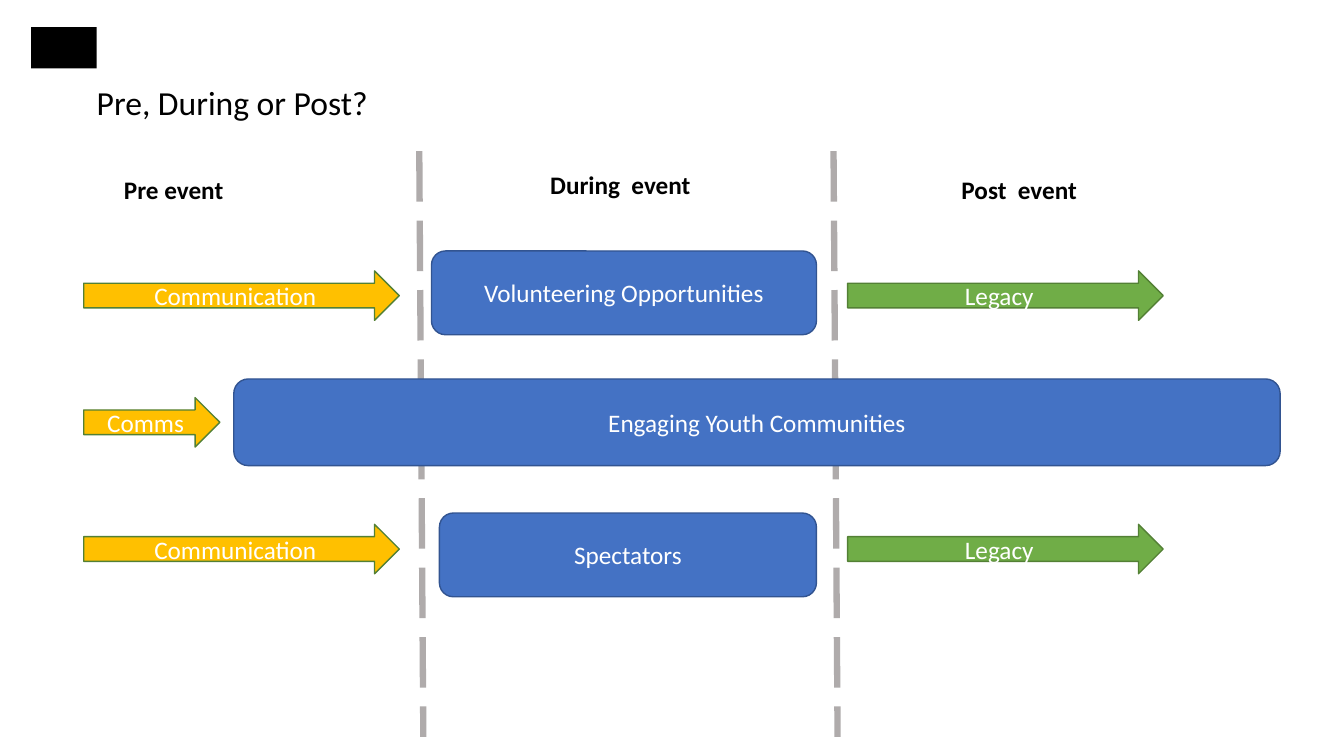
from lxml import etree
from pptx import Presentation
from pptx.dml.color import RGBColor
from pptx.enum.dml import MSO_LINE
from pptx.enum.shapes import MSO_CONNECTOR, MSO_SHAPE
from pptx.enum.text import MSO_ANCHOR, PP_ALIGN
from pptx.oxml.ns import qn
from pptx.util import Pt

BOX, ARROW, RECT = MSO_SHAPE.ROUNDED_RECTANGLE, MSO_SHAPE.RIGHT_ARROW, MSO_SHAPE.RECTANGLE
STRAIGHT, DASH = MSO_CONNECTOR.STRAIGHT, MSO_LINE.LONG_DASH
TOP, MIDDLE = MSO_ANCHOR.TOP, MSO_ANCHOR.MIDDLE
CENTER = PP_ALIGN.CENTER

FONT = "Calibri"
COLORS = {
    "black": "000000", "white": "FFFFFF", "grey": "AFABAB",
    "blue": "4472C4", "navy": "325491",
    "gold": "FFC000", "green": "70AD47", "forest": "538035",
}

TITLE = "Pre, During or Post?"
# text, left, top, width
HEADS = [
    ("Pre event", 81.4, 121, 90),
    ("During  event", 385.9, 117.4, 119.5),
    ("Post  event", 679.7, 121, 101.5),
]
# text, left, top, width, height
STAGES = [
    ("Volunteering Opportunities", 308.2, 179.3, 275, 59.8),
    ("Engaging Youth Communities", 167, 270.7, 747.4, 61.9),
    ("Spectators", 313.9, 366.5, 269.3, 59.8),
]
ROWS = [193.5, 284, 374.5]
PRE, POST = 59.8, 605.5
LONG, SHORT, TALL = 225.4, 97.2, 35.3
# text, row, left, width, fill
ARROWS = [
    ("Legacy", 0, POST, LONG, "green"),
    ("Legacy", 2, POST, LONG, "green"),
    ("Communication", 0, PRE, LONG, "gold"),
    ("Communication", 2, PRE, LONG, "gold"),
    ("Comms", 1, PRE, SHORT, "gold"),
]
BOUNDS = [595.4, 299.5]
LEAN, START, END = 2.9, 108, 526.3

deck = Presentation()
deck.slide_width, deck.slide_height = Pt(960), Pt(540)
slide = deck.slides.add_slide(deck.slide_layouts[6])
shapes = slide.shapes


def color(name):
    return RGBColor.from_string(COLORS[name])


def write(frame, text, size, ink, bold=False):
    para = frame.paragraphs[0]
    run = para.add_run()
    run.text = text
    font = run.font
    font.name, font.size, font.bold = FONT, Pt(size), bold
    font.color.rgb = color(ink)
    return para


def label(text, place, size, bold=False, wrap=False):
    frame = shapes.add_textbox(*map(Pt, place)).text_frame
    frame.word_wrap = wrap
    return frame, write(frame, text, size, "black", bold)


def block(kind, place, fill, edge=None, text=""):
    shape = shapes.add_shape(kind, *map(Pt, place))
    shape.shadow.inherit = False
    shape.fill.solid()
    shape.fill.fore_color.rgb = color(fill)
    if edge:
        shape.line.color.rgb = color(edge)
        shape.line.width = Pt(1)
    else:
        shape.line.fill.background()
    if text:
        frame = shape.text_frame
        frame.word_wrap = True
        frame.vertical_anchor = MIDDLE
        write(frame, text, 18, "white").alignment = CENTER


def divide(left):
    """Draw a slightly leaning dashed border between two phases."""
    line = shapes.add_connector(STRAIGHT, Pt(left), Pt(START), Pt(left + LEAN), Pt(END))
    line.line.color.rgb = color("grey")
    line.line.width = Pt(4.5)
    line.line.dash_style = DASH
    etree.SubElement(line._element.spPr, qn("a:effectLst"))


block(RECT, (22.3, 19.4, 46.8, 29.5), "black")

frame, para = label(TITLE, (69.1, 61.9, 513.4, 28.1), 24, wrap=True)
frame.margin_left = frame.margin_right = frame.margin_top = frame.margin_bottom = 0
frame.vertical_anchor = TOP
para.line_spacing = 0.9

for left in BOUNDS:
    divide(left)
for text, left, top, width in HEADS:
    label(text, (left, top, width, 29), 18, bold=True)
for text, *place in STAGES:
    block(BOX, place, "blue", "navy", text)
for text, row, left, width, fill in ARROWS:
    block(ARROW, (left, ROWS[row], width, TALL), fill, "forest", text)

deck.save("out.pptx")
